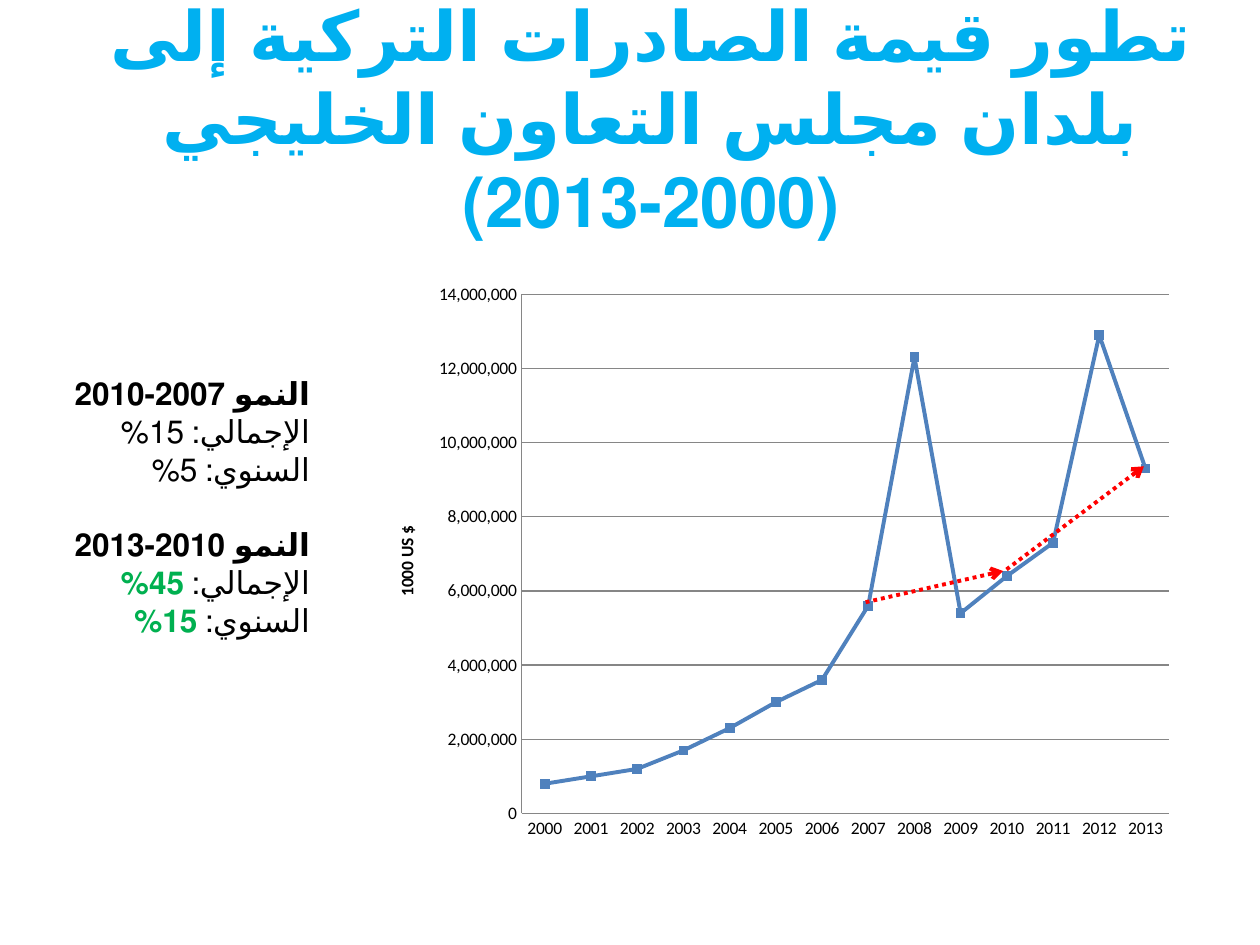
from lxml import etree
from pptx import Presentation
from pptx.chart.data import CategoryChartData
from pptx.dml.color import RGBColor
from pptx.enum.chart import XL_CHART_TYPE, XL_MARKER_STYLE, XL_TICK_MARK
from pptx.enum.dml import MSO_LINE
from pptx.enum.lang import MSO_LANGUAGE_ID
from pptx.enum.shapes import MSO_CONNECTOR
from pptx.enum.text import MSO_ANCHOR, MSO_AUTO_SIZE, PP_ALIGN
from pptx.oxml import parse_xml
from pptx.oxml.ns import nsdecls, qn
from pptx.util import Cm, Pt

BLACK = RGBColor(0, 0, 0)
SKY = RGBColor(0x00, 0xB0, 0xF0)
GREEN = RGBColor(0x00, 0xB0, 0x50)
RED = RGBColor(0xFF, 0, 0)
BLUE = RGBColor(0x4F, 0x81, 0xBD)
GREY = RGBColor(0x86, 0x86, 0x86)
FONT = "Calibri"


def add_span(para, text, size, color, bold, language=MSO_LANGUAGE_ID.ARABIC):
    span = para.add_run()
    span.text = text
    span.font.language_id = language
    span.font.name = FONT
    span.font.size = Pt(size)
    span.font.bold = bold
    span.font.color.rgb = color


def set_rtl(para, alignment):
    para.alignment = alignment
    para._p.get_or_add_pPr().set("rtl", "1")


deck = Presentation()
deck.slide_width, deck.slide_height = Cm(25.4), Cm(19.05)
page = deck.slides.add_slide(deck.slide_layouts[5])

# Title
title = page.shapes.title
title.left, title.top, title.width, title.height = Cm(1.27), Cm(0.76), Cm(23.7), Cm(3.18)
title.text_frame.vertical_anchor = MSO_ANCHOR.MIDDLE
title.text_frame.auto_size = MSO_AUTO_SIZE.NONE
para = title.text_frame.paragraphs[0]
set_rtl(para, PP_ALIGN.CENTER)
add_span(para, "تطور قيمة الصادرات التركية إلى بلدان مجلس التعاون الخليجي (2000-2013)",
         39.6, SKY, True)

# Export values, in thousand US dollars
chart_data = CategoryChartData(number_format="#,##0")
chart_data.categories = [str(year) for year in range(2000, 2014)]
chart_data.add_series("Series 1", [
    800000, 1000000, 1200000, 1700000, 2300000, 3000000, 3600000,
    5600000, 12300000, 5400000, 6400000, 7300000, 12900000, 9300000])
chart = page.shapes.add_chart(XL_CHART_TYPE.LINE_MARKERS, Cm(7.38), Cm(5.47),
                              Cm(16.51), Cm(11.63), chart_data).chart
chart.has_legend = False
chart.has_title = False
chart.font.name = FONT
chart.font.size = Pt(10)
chart.font.color.rgb = BLACK
chart.plots[0].vary_by_categories = False

series = chart.plots[0].series[0]
series.smooth = False
series.format.line.color.rgb = BLUE
series.format.line.width = Pt(2.25)
series.marker.style = XL_MARKER_STYLE.SQUARE
series.marker.size = 5
series.marker.format.fill.solid()
series.marker.format.fill.fore_color.rgb = BLUE
series.marker.format.line.color.rgb = BLUE

# Axes
values = chart.value_axis
values.minimum_scale, values.maximum_scale, values.major_unit = 0, 14000000, 2000000
values.tick_labels.number_format = "#,##0"
values.tick_labels.number_format_is_linked = False
values.has_major_gridlines = True
values.major_gridlines.format.line.color.rgb = GREY
values.major_gridlines.format.line.width = Pt(0.75)
for axis in (chart.category_axis, values):
    axis.major_tick_mark = axis.minor_tick_mark = XL_TICK_MARK.NONE
    axis.format.line.color.rgb = GREY
    axis.format.line.width = Pt(0.75)
add_span(values.axis_title.text_frame.paragraphs[0], "1000 US $", 10, BLACK, True,
         MSO_LANGUAGE_ID.ENGLISH_US)

# Fixed place of the plot area within the chart
plot_area = chart._chartSpace.chart.plotArea
for layout in plot_area.findall(qn("c:layout")):
    plot_area.remove(layout)
plot_area.insert(0, parse_xml(
    f'<c:layout {nsdecls("c")}><c:manualLayout><c:layoutTarget val="inner"/>'
    '<c:xMode val="edge"/><c:yMode val="edge"/><c:x val="0.19"/><c:y val="0.04"/>'
    '<c:w val="0.79"/><c:h val="0.9"/></c:manualLayout></c:layout>'))

# Growth figures: heading, then total and yearly growth
box = page.shapes.add_textbox(Cm(0.2), Cm(7.42), Cm(6.3), Cm(5.64))
frame = box.text_frame
frame.word_wrap = True
frame.auto_size = MSO_AUTO_SIZE.SHAPE_TO_FIT_TEXT
periods = [("2007-2010", "15%", "5%", BLACK, False),
           ("2010-2013", "45%", "15%", GREEN, True)]
for index, (years, total, yearly, color, bold) in enumerate(periods):
    heading = frame.add_paragraph() if index else frame.paragraphs[0]
    set_rtl(heading, PP_ALIGN.RIGHT)
    add_span(heading, f"النمو {years}", 18, BLACK, True)
    if index:
        heading.space_before = Pt(21.6)
    for label, value in (("الإجمالي: ", total), ("السنوي: ", yearly)):
        para = frame.add_paragraph()
        set_rtl(para, PP_ALIGN.RIGHT)
        add_span(para, label, 18, BLACK, False)
        add_span(para, value, 18, color, bold)

# Trend arrows
for start_x, start_y, end_x, end_y in ((17.45, 12.14, 20.22, 11.51),
                                       (20.29, 11.48, 23.06, 9.4)):
    arrow = page.shapes.add_connector(MSO_CONNECTOR.STRAIGHT, Cm(start_x), Cm(start_y),
                                      Cm(end_x), Cm(end_y))
    arrow.line.color.rgb = RED
    arrow.line.width = Pt(2.25)
    arrow.line.dash_style = MSO_LINE.ROUND_DOT
    etree.SubElement(arrow.line._get_or_add_ln(), qn("a:tailEnd"), type="arrow")
    etree.SubElement(arrow._element.spPr, qn("a:effectLst"))

deck.save("out.pptx")
